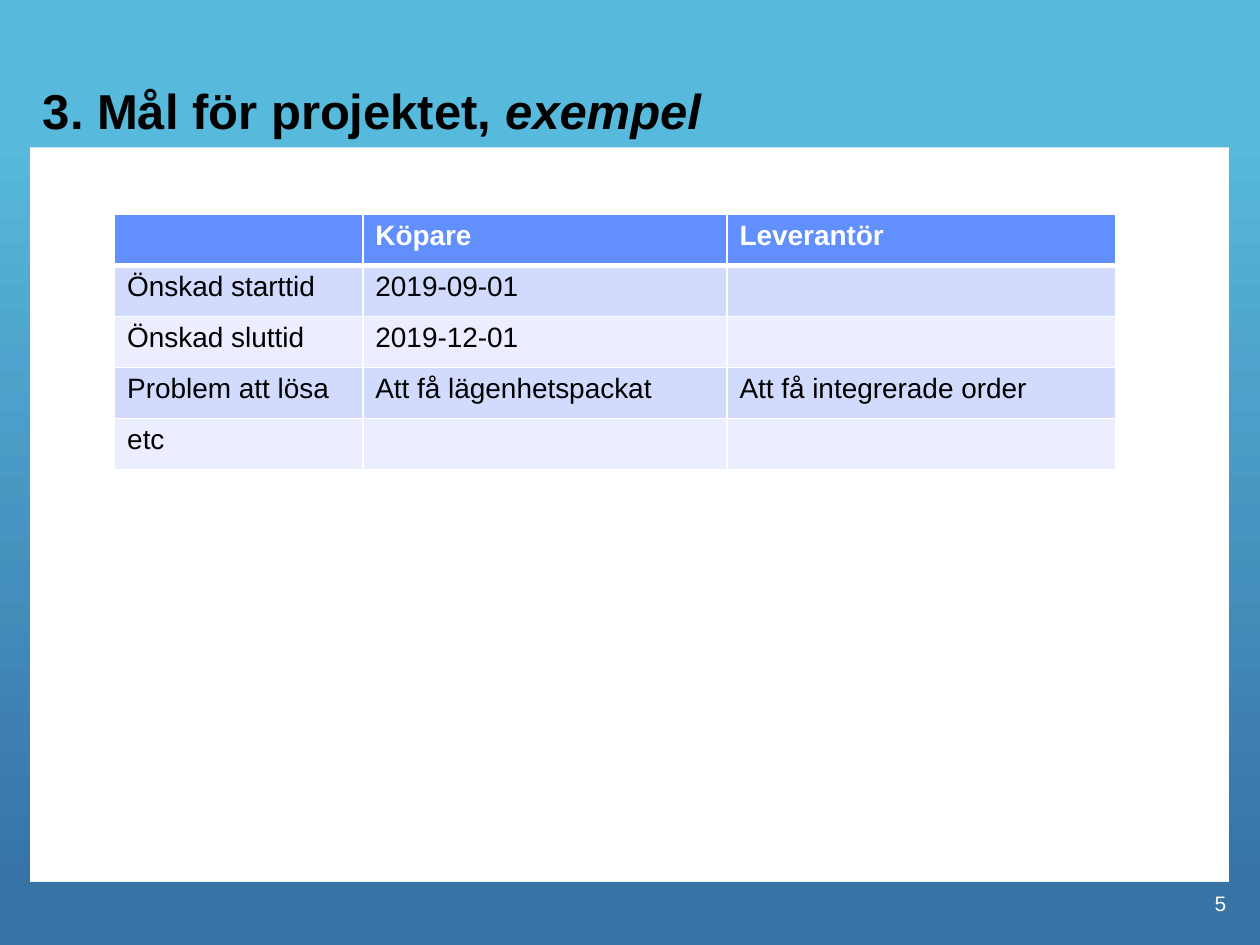
"""Builds the project goals slide: a blue frame, a title and a comparison table."""
from dataclasses import dataclass
from typing import Optional

from lxml.etree import SubElement
from pptx import Presentation
from pptx.dml.color import RGBColor
from pptx.enum.shapes import MSO_SHAPE as Shape
from pptx.enum.text import MSO_ANCHOR as Anchor, PP_ALIGN as Align
from pptx.oxml.ns import qn
from pptx.util import Inches, Pt

WIDTH, HEIGHT = 10, 7.5
SKY, STEEL, WHITE, BLACK = "57B9DC", "3773A5", "FFFFFF", "000000"
HEADER, BANDS = "618FFD", ("D2DBFE", "EAEEFF")
COLUMNS, ROW_HEIGHT = (1.97, 2.89, 3.09), 0.405
ROWS = (
    ("", "Köpare", "Leverantör"),
    ("Önskad starttid", "2019-09-01", ""),
    ("Önskad sluttid", "2019-12-01", ""),
    ("Problem att lösa", "Att få lägenhetspackat", "Att få integrerade order"),
    ("etc", "", ""),
)


@dataclass(frozen=True)
class Bar:
    left: float
    top: float
    width: float
    height: float
    color: str
    end_color: Optional[str] = None


SIDE, SIDE_TOP, FOOT_TOP = 0.24, 1.08, 7
SIDE_HEIGHT = FOOT_TOP - SIDE_TOP
BARS = (
    Bar(0, SIDE_TOP, SIDE, SIDE_HEIGHT, SKY, STEEL),
    Bar(0, FOOT_TOP, WIDTH, HEIGHT - FOOT_TOP, STEEL),
    Bar(0, 0, WIDTH, 1.17, SKY),
    Bar(WIDTH - 0.25, SIDE_TOP, 0.25, SIDE_HEIGHT, SKY, STEEL),
)


def rgb(color: str) -> RGBColor:
    return RGBColor.from_string(color)


def place(shape, left: float, top: float, width: float, height: float) -> None:
    shape.left, shape.top = Inches(left), Inches(top)
    shape.width, shape.height = Inches(width), Inches(height)


def write(paragraph, text: str, size: float = 16, color: str = BLACK,
          bold: bool = False, italic: bool = False, align=Align.LEFT) -> None:
    paragraph.alignment = align
    run = paragraph.add_run()
    run.text = text
    font = run.font
    font.name, font.size, font.bold, font.italic = "Arial", Pt(size), bold, italic
    font.color.rgb = rgb(color)


def draw_bar(slide, bar: Bar) -> None:
    shape = slide.shapes.add_shape(Shape.RECTANGLE, 0, 0, 0, 0)
    place(shape, bar.left, bar.top, bar.width, bar.height)
    shape.shadow.inherit = False
    shape.line.fill.background()
    if bar.end_color:
        shape.fill.gradient()
        shape.fill.gradient_angle = 270
        for stop, color in zip(shape.fill.gradient_stops, (bar.color, bar.end_color)):
            stop.color.rgb = rgb(color)
    else:
        shape.fill.solid()
        shape.fill.fore_color.rgb = rgb(bar.color)


def set_borders(cell, **widths: float) -> None:
    properties = cell._tc.get_or_add_tcPr()
    for index, (side, width) in enumerate(widths.items()):
        line = SubElement(properties, qn(f"a:ln{side}"), w=str(Pt(width)))
        fill = SubElement(line, qn("a:solidFill"))
        SubElement(fill, qn("a:srgbClr"), val=WHITE)
        properties.insert(index, line)


def draw_table(slide, left: float, top: float) -> None:
    frame = slide.shapes.add_table(
        len(ROWS), len(COLUMNS), Inches(left), Inches(top),
        Inches(sum(COLUMNS)), Inches(ROW_HEIGHT * len(ROWS)))
    table = frame.table
    for column, width in zip(table.columns, COLUMNS):
        column.width = Inches(width)
    for row_index, texts in enumerate(ROWS):
        is_header = row_index == 0
        table.rows[row_index].height = Inches(ROW_HEIGHT)
        for column_index, text in enumerate(texts):
            cell = table.cell(row_index, column_index)
            cell.fill.solid()
            cell.fill.fore_color.rgb = rgb(HEADER if is_header else BANDS[(row_index - 1) % 2])
            set_borders(cell, L=1, R=1, T=3 if row_index == 1 else 1, B=3 if is_header else 1)
            if text:
                write(cell.text_frame.paragraphs[0], text,
                      color=WHITE if is_header else BLACK, bold=is_header)


def draw_title(slide) -> None:
    title = slide.shapes.title
    slide.shapes._spTree.append(title._element)
    place(title, SIDE, 0.4, WIDTH - 2 * SIDE, 0.76)
    title.text_frame.vertical_anchor = Anchor.BOTTOM
    paragraph = title.text_frame.paragraphs[0]
    write(paragraph, "3. Mål för projektet, ", size=28, bold=True)
    write(paragraph, "exempel", size=28, bold=True, italic=True)


def draw_page_number(slide, number: str) -> None:
    box = slide.shapes.add_textbox(0, 0, 0, 0)
    place(box, 7.75, 6.92, 2.08, 0.5)
    box.text_frame.word_wrap = True
    box.text_frame.vertical_anchor = Anchor.MIDDLE
    write(box.text_frame.paragraphs[0], number, size=12, color=WHITE, align=Align.RIGHT)


def main() -> None:
    presentation = Presentation()
    presentation.slide_width, presentation.slide_height = Inches(WIDTH), Inches(HEIGHT)
    slide = presentation.slides.add_slide(presentation.slide_layouts[5])
    for bar in BARS:
        draw_bar(slide, bar)
    draw_page_number(slide, "5")
    draw_title(slide)
    draw_table(slide, 0.91, 1.7)
    presentation.save("out.pptx")


if __name__ == "__main__":
    main()
